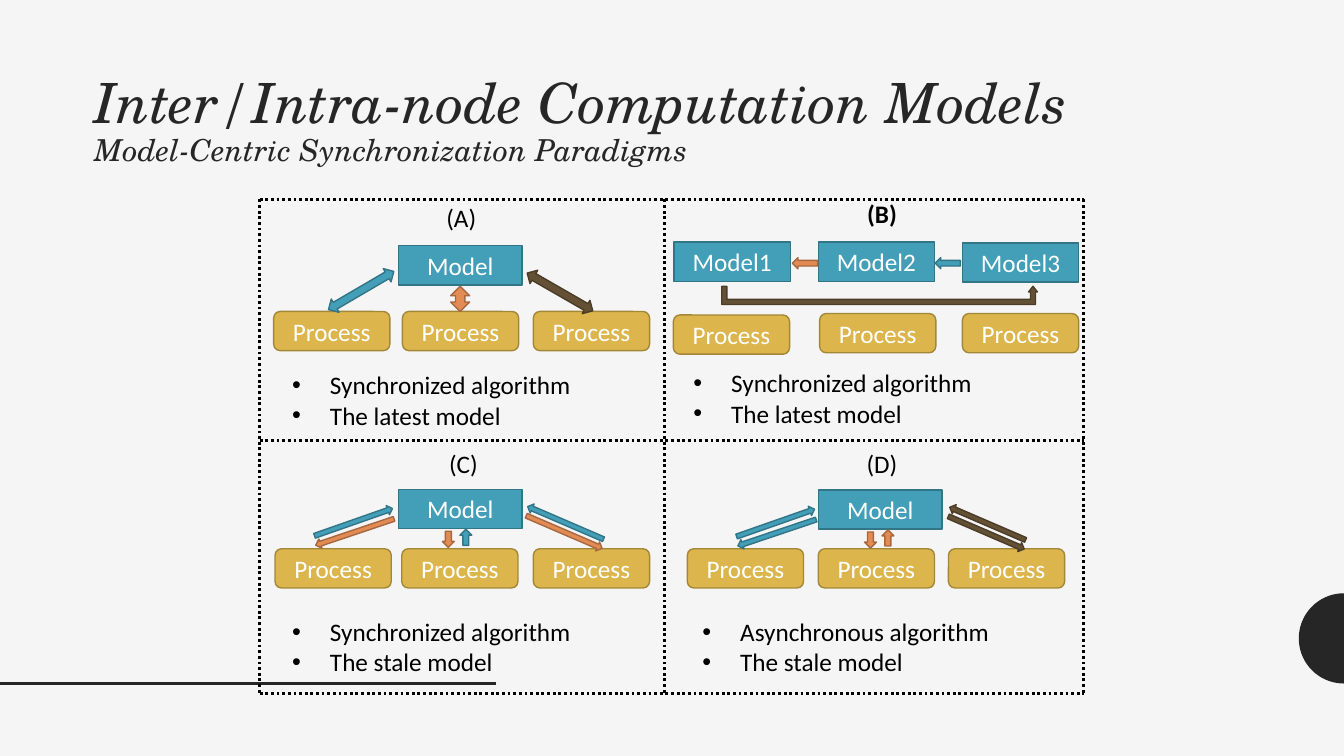
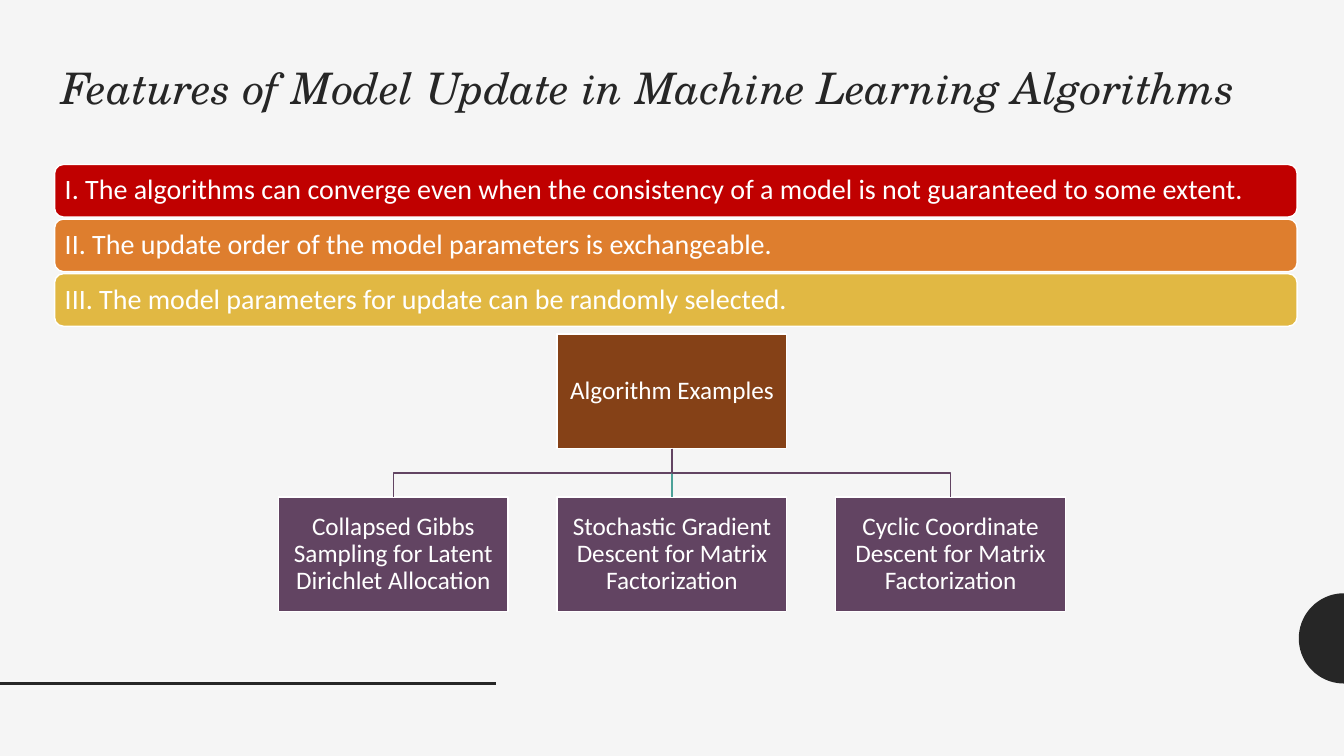
import math

import lxml.etree
import pptx
import pptx.dml.color
import pptx.enum.dml
import pptx.enum.shapes
import pptx.enum.text
import pptx.oxml.ns
import pptx.util

Pt = pptx.util.Pt
qn = pptx.oxml.ns.qn
SHAPE = pptx.enum.shapes.MSO_SHAPE
ALIGN = pptx.enum.text.PP_ALIGN
ANCHOR = pptx.enum.text.MSO_ANCHOR

# Shared look
BODY, HEAD = "Calibri", "TeX Gyre Schola"
PAPER, INK, WHITE, BLACK = "F5F5F5", "262626", "FFFFFF", "000000"
PLUM, SEA = "624462", "4CA198"
TEAL = ("439EB7", "327587")
GOLD = ("DCB64D", "A38739")
RUST = ("E28B55", "A7673F")
BROWN = ("645135", "4A3C27")

# Slide 1: panels of models (text, x, y, width), processes (x, y), list
TITLE1 = "Inter/Intra-node Computation Models\nModel-Centric Synchronization Paradigms"
SYNC, ASYNC = "Synchronized algorithm", "Asynchronous algorithm"
LATEST, STALE = "The latest model", "The stale model"
PANELS = [
    {"tag": "(A)", "mid": 329.5, "top": 141,
     "models": [("Model", 284.5, 175.5, 88.5)],
     "procs": [(195.5, 222.5), (287.5, 222.5), (381, 222.5)],
     "list": [SYNC, LATEST], "at": (201.5, 260.5)},
    {"tag": "(B)", "mid": 630, "top": 138,
     "models": [("Model1", 481.5, 173, 83), ("Model2", 584.5, 173, 83),
                ("Model3", 687.5, 173.5, 83)],
     "procs": [(481, 225), (585.5, 224), (687.5, 224)],
     "list": [SYNC, LATEST], "at": (488, 259)},
    {"tag": "(C)", "mid": 331, "top": 317,
     "models": [("Model", 284.5, 349.5, 88.5)],
     "procs": [(196.5, 392), (287, 392), (381, 392)],
     "list": [SYNC, STALE], "at": (201.5, 436.5)},
    {"tag": "(D)", "mid": 630, "top": 317,
     "models": [("Model", 584.5, 350, 88.5)],
     "procs": [(491, 392), (584.5, 392), (677.5, 392)],
     "list": [ASYNC, STALE], "at": (494.5, 436.5)},
]
BOLD_TAG = "(B)"

# Arrows: shape, box, turn, tone
BOTH, RIGHT = SHAPE.UP_DOWN_ARROW, SHAPE.RIGHT_ARROW
ARROWS = [
    (BOTH, (252.5, 180.5, 11, 54), 59.7, TEAL),
    (BOTH, (322, 204.5, 13.5, 18), 0, RUST),
    (BOTH, (394.5, 181.5, 11, 54), 299.9, BROWN),
    (RIGHT, (566, 184, 18, 8), 180, RUST),
    (RIGHT, (668, 184, 18, 8), 180, TEAL),
]
LOOP = (515.5, 204.5, 225.5, 13)
BENDS = (0.28, 0.243, 0.31, 0, 1)

# Panels C and D share one set of arrows: box and turn
PAIRS = [((223, 369.5, 59, 7), 340.7), ((224, 376.5, 59, 7), 161.4),
         ((374.5, 370, 59, 7), 203.3), ((373.5, 376.5, 59, 7), 23.3),
         ((314.5, 381, 11.5, 8.5), 90), ((327, 379.5, 11.5, 8.5), 270)]
SETS = [(0, 0, [TEAL, RUST, TEAL, RUST, RUST, TEAL]),
        (301.5, 0.5, [TEAL, TEAL, BROWN, BROWN, RUST, RUST])]
COLS, ROWS = (185.5, 474.5, 774), (142.5, 314.5, 495.5)

# Slide 2
TITLE2 = "Features of Model Update in Machine Learning Algorithms"
BARS = [
    ("I. The algorithms can converge even when the consistency of a model is "
     "not guaranteed to some extent.", "C00000"),
    ("II. The update order of the model parameters is exchangeable.", "DE7E2E"),
    ("III. The model parameters for update can be randomly selected.", "E1B843"),
]
ROOT = "Algorithm Examples"
KIDS = ["Collapsed Gibbs Sampling for Latent Dirichlet Allocation",
        "Stochastic Gradient Descent for Matrix Factorization",
        "Cyclic Coordinate Descent for Matrix Factorization"]


def rgb(code):
    return pptx.dml.color.RGBColor.from_string(code)


def style(para, size, color, align=ALIGN.LEFT, font=BODY, bold=False,
          slant=False, space=1.0):
    para.alignment = align
    para.line_spacing = space
    para.space_before = Pt(0)
    for run in para.runs:
        face = run.font
        face.name, face.size, face.bold, face.italic = font, Pt(size), bold, slant
        face.color.rgb = rgb(color)


def place(shape, box):
    shape.left, shape.top, shape.width, shape.height = map(Pt, box)


def draw(slide, kind, box, fill, edge, text="", size=18, align=ALIGN.CENTER,
         space=1.0, pad=None):
    shape = slide.shapes.add_shape(kind, *map(Pt, box))
    shape.shadow.inherit = False
    shape.fill.solid()
    shape.fill.fore_color.rgb = rgb(fill)
    shape.line.color.rgb = rgb(edge)
    shape.line.width = Pt(1)
    if text:
        frame = shape.text_frame
        frame.text = text
        frame.word_wrap = True
        frame.vertical_anchor = ANCHOR.MIDDLE
        if pad is not None:
            frame.margin_left = frame.margin_right = Pt(pad)
            frame.margin_top = frame.margin_bottom = Pt(1)
        style(frame.paragraphs[0], size, WHITE, align, space=space)
    return shape


def rule(slide, ends, color, width, dots=False):
    line = slide.shapes.add_connector(
        pptx.enum.shapes.MSO_CONNECTOR.STRAIGHT, *map(Pt, ends))
    line.line.color.rgb = rgb(color)
    line.line.width = Pt(width)
    if dots:
        line.line.dash_style = pptx.enum.dml.MSO_LINE.ROUND_DOT
    lxml.etree.SubElement(line.element.spPr, qn("a:effectLst"))
    return line


def outline(slide, spots, closed):
    spots = [(Pt(x), Pt(y)) for x, y in spots]
    pen = slide.shapes.build_freeform(*spots[0])
    pen.add_line_segments(spots[1:], close=closed)
    shape = pen.convert_to_shape()
    shape.shadow.inherit = False
    return shape


def label(slide, box, text, bold):
    frame = slide.shapes.add_textbox(*map(Pt, box)).text_frame
    frame.word_wrap = True
    frame.text = text
    style(frame.paragraphs[0], 18, BLACK, ALIGN.CENTER, bold=bold)


def title(slide, box, text, sizes):
    shape = slide.shapes.title
    place(shape, box)
    frame = shape.text_frame
    frame.text = text
    frame.auto_size = pptx.enum.text.MSO_AUTO_SIZE.NONE
    frame.vertical_anchor = ANCHOR.BOTTOM
    for para, size in zip(frame.paragraphs, sizes):
        style(para, size, INK, font=HEAD, slant=True, space=0.9)


def bullets(shape, box, items):
    place(shape, box)
    frame = shape.text_frame
    frame.text = "\n".join(items)
    frame.auto_size = pptx.enum.text.MSO_AUTO_SIZE.NONE
    frame.vertical_anchor = ANCHOR.TOP
    for para in frame.paragraphs:
        style(para, 18, BLACK)
        props = para._p.get_or_add_pPr()
        props.set("marL", str(Pt(27)))
        props.set("indent", str(-Pt(27)))
        face = lxml.etree.SubElement(props, qn("a:buFont"))
        face.set("typeface", "Arial")
        lxml.etree.SubElement(props, qn("a:buChar")).set("char", "•")


def dress(deck, slide):
    """Draw the shared parts and move them to the slide master."""
    master = deck.slide_master
    master.background.fill.solid()
    master.background.fill.fore_color.rgb = rgb(PAPER)
    band = rule(slide, (0, 488, 354.5, 488), INK, 2)
    turns = [math.radians(90 + 5 * i) for i in range(37)]
    disc = outline(slide, [(960 + 32.25 * math.cos(t), 456 + 32.25 * math.sin(t))
                           for t in turns], True)
    disc.fill.solid()
    disc.fill.fore_color.rgb = rgb(INK)
    disc.line.fill.background()
    for part in (band, disc):
        master.shapes.element.append(part.element)


def paradigms(slide):
    title(slide, (60, 40, 840, 84), TITLE1, (39.6, 21.6))
    slots = list(slide.placeholders)[1:]
    for panel, slot in zip(PANELS, slots):
        bullets(slot, (*panel["at"], 266, 51), panel["list"])
        for text, x, y, wide in panel["models"]:
            draw(slide, SHAPE.RECTANGLE, (x, y, wide, 28), *TEAL, text)
        for x, y in panel["procs"]:
            draw(slide, SHAPE.ROUNDED_RECTANGLE, (x, y, 83, 28), *GOLD, "Process")
        label(slide, (panel["mid"] - 27, panel["top"], 54, 29), panel["tag"],
              panel["tag"] == BOLD_TAG)

    # Arrows
    arrows = list(ARROWS)
    for dx, dy, tones in SETS:
        for ((x, y, w, h), turn), tone in zip(PAIRS, tones):
            arrows.append((RIGHT, (x + dx, y + dy, w, h), turn, tone))
    for kind, box, turn, tone in arrows:
        draw(slide, kind, box, *tone).rotation = turn
    loop = draw(slide, SHAPE.U_TURN_ARROW, LOOP, *BROWN)
    loop.rotation = 180
    loop.element.spPr.xfrm.set("flipH", "1")
    for i, bend in enumerate(BENDS):
        loop.adjustments[i] = bend

    # Dotted grid
    for x in COLS:
        rule(slide, (x, ROWS[0], x, ROWS[-1]), BLACK, 2, dots=True)
    for y in ROWS:
        rule(slide, (COLS[0], y, COLS[-1], y), BLACK, 2, dots=True)


def features(slide):
    title(slide, (36.5, 42, 867, 43), TITLE2, (31,))
    for i, (text, fill) in enumerate(BARS):
        draw(slide, SHAPE.ROUNDED_RECTANGLE, (39, 117.5 + 39 * i, 887.5, 37.5),
             fill, WHITE, text, 20, ALIGN.LEFT, 0.9, 5.4)

    # Tree
    wide, high, step = 164, 82, 199
    mid, low, deep = 480, 320.5, 355
    bend = (low + deep) / 2
    root = draw(slide, SHAPE.RECTANGLE, (mid - wide / 2, low - high, wide, high),
                "854117", WHITE, ROOT, space=0.9, pad=1)
    for i, text in enumerate(KIDS):
        x = mid + (i - 1) * step
        kid = draw(slide, SHAPE.RECTANGLE, (x - wide / 2, deep, wide, high),
                   PLUM, WHITE, text, space=0.9, pad=1)
        if x == mid:
            stem = rule(slide, (mid, low, mid, deep), SEA, 1)
            stem.begin_connect(root, 2)
            stem.end_connect(kid, 0)
        else:
            limb = outline(slide, [(mid, low), (mid, bend), (x, bend), (x, deep)],
                           False)
            limb.fill.background()
            limb.line.color.rgb = rgb(PLUM)
            limb.line.width = Pt(1)


def main():
    deck = pptx.Presentation()
    deck.slide_width, deck.slide_height = Pt(960), Pt(540)
    first = deck.slides.add_slide(deck.slide_layouts.get_by_name("Comparison"))
    dress(deck, first)
    paradigms(first)
    features(deck.slides.add_slide(deck.slide_layouts.get_by_name("Title Only")))
    deck.save("out.pptx")


if __name__ == "__main__":
    main()
